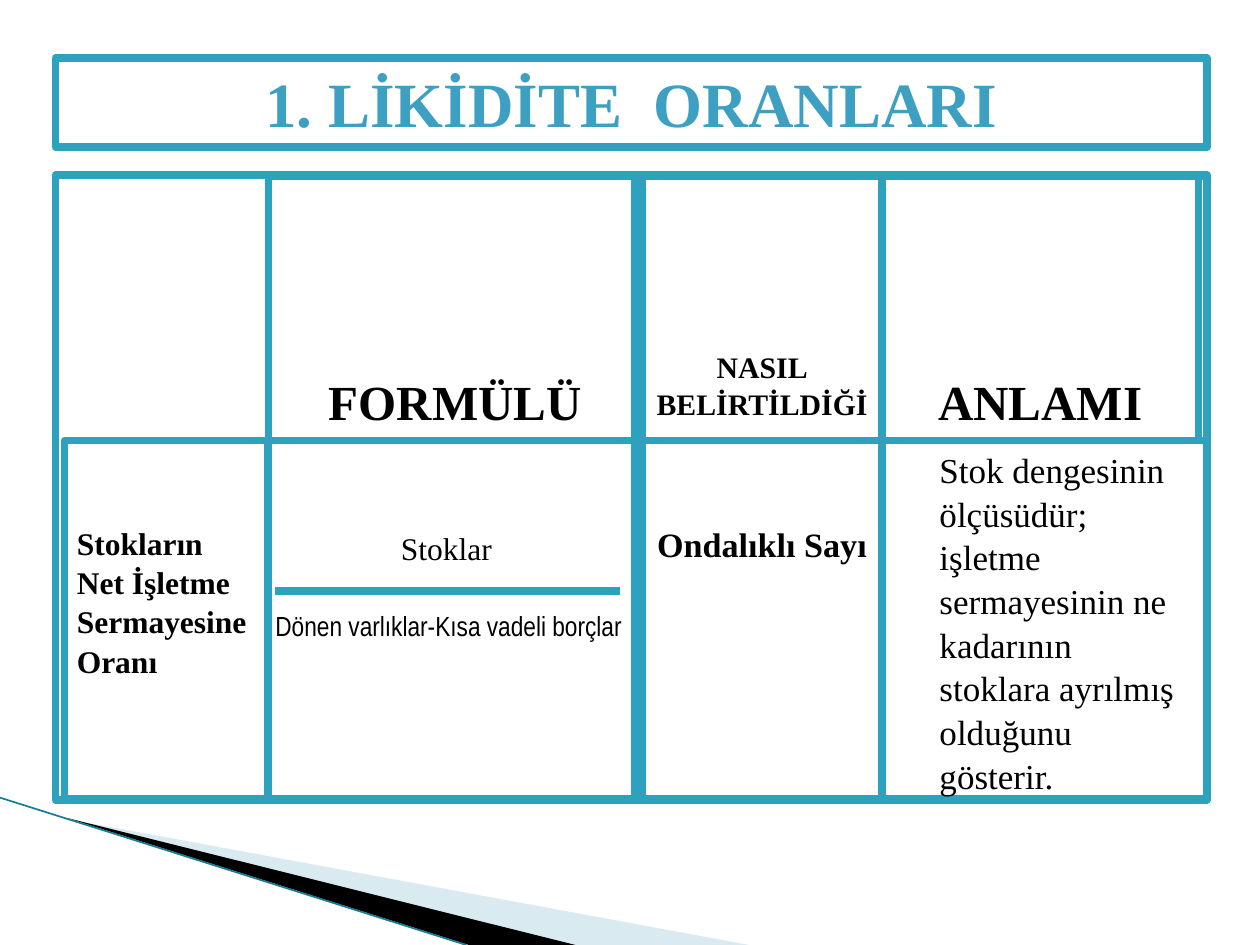
from lxml.etree import SubElement
from pptx import Presentation
from pptx.dml.color import RGBColor
from pptx.enum.shapes import MSO_CONNECTOR, MSO_SHAPE
from pptx.enum.text import MSO_ANCHOR, PP_ALIGN
from pptx.oxml.ns import qn
from pptx.util import Cm, Pt

HUES = {"line": "2DA2BF", "title": "3DA0C2", "text": "000000", "page": "FFFFFF",
        "pale": "A0CBDC", "edge": "167C95"}
SERIF, NARROW = "Times New Roman", "Arial Narrow"
LEFT, CENTER = PP_ALIGN.LEFT, PP_ALIGN.CENTER
TOP, MID, LOW = MSO_ANCHOR.TOP, MSO_ANCHOR.MIDDLE, MSO_ANCHOR.BOTTOM
TITLE = "1. LİKİDİTE  ORANLARI"

# Frames: left and right edge, in cm; both rows share the same heights
ROWS = {"head": (3.56, 8.88), "body": (8.88, 16.1), "all": (3.53, 16.13)}
FRAMES = [
    ("head", 5.41, 12.95), ("head", 5.41, 12.8), ("head", 12.95, 17.78),
    ("head", 17.78, 24.16), ("head", 17.78, 24.33),
    ("body", 1.3, 5.41), ("body", 5.41, 12.8), ("body", 12.95, 17.78),
    ("body", 17.78, 24.33), ("all", 1.12, 24.33),
]

# Texts: box (left, top, width, height), lines, size, font, bold, align,
# anchor, margins (side, top, bottom)
TEXTS = [
    ((5.41, 3.56, 7.54, 5.32), ["FORMÜLÜ"], 28, SERIF, True, CENTER, LOW, (0.25, 0, 0.2)),
    ((12.95, 3.56, 4.83, 5.32), ["NASIL", "BELİRTİLDİĞİ"], 17, SERIF, True, CENTER, LOW,
     (0.1, 0, 0.39)),
    ((17.78, 3.56, 6.38, 5.32), ["ANLAMI"], 28, SERIF, True, CENTER, LOW, (0.25, 0, 0.2)),
    ((1.3, 8.88, 4.11, 7.22), ["Stokların Net İşletme Sermayesine Oranı"], 18, SERIF, True,
     LEFT, TOP, (0.25, 1.65, 0)),
    ((12.95, 8.88, 4.83, 7.22), ["Ondalıklı Sayı"], 19.5, SERIF, True, CENTER, TOP,
     (0.1, 2.43, 0)),
    ((18.69, 8.88, 5.41, 7.22),
     ["Stok dengesinin ölçüsüdür;", "işletme",
      "sermayesinin ne kadarının stoklara ayrılmış olduğunu gösterir."],
     20, SERIF, False, LEFT, TOP, (0.25, 0.13, 0)),
    ((4.09, 12.12, 9.93, 0.94), ["Dönen varlıklar-Kısa vadeli borçlar"], 15.8, NARROW, False,
     CENTER, MID, (0.25, 0.13, 0.13)),
    ((7.82, 10.52, 2.36, 1.02), ["Stoklar"], 18, SERIF, False, CENTER, MID, (0, 0.13, 0.13)),
]

# Corner wedges: points, colour, opacity in percent
WEDGES = [
    ([(1.4, 16.52), (15.1, 19.05), (11.58, 19.05)], "pale", 40),
    ([(1.35, 16.49), (11.6, 19.05), (9.45, 19.05)], "text", 100),
]


def ink(hue):
    return RGBColor.from_string(HUES[hue])


def stroke(line, hue="line", width=4.33):
    line.color.rgb = ink(hue)
    line.width = Pt(width)


def rule(slide, x1, y1, x2, y2, *look):
    bar = slide.shapes.add_connector(MSO_CONNECTOR.STRAIGHT, Cm(x1), Cm(y1), Cm(x2), Cm(y2))
    stroke(bar.line, *look)
    SubElement(bar._element.spPr, qn("a:effectLst"))


def write(frame, lines, size, face, bold, align, anchor, gaps, hue="text", pitch=1.0):
    side, top, low = gaps
    frame.word_wrap = True
    frame.vertical_anchor = anchor
    frame.margin_left = frame.margin_right = Cm(side)
    frame.margin_top, frame.margin_bottom = Cm(top), Cm(low)
    frame.text = "\n".join(lines)
    for para in frame.paragraphs:
        para.alignment = align
        para.line_spacing = pitch
        for run in para.runs:
            font = run.font
            font.name, font.size, font.bold = face, Pt(size), bold
            font.color.rgb = ink(hue)


deck = Presentation()
deck.slide_width, deck.slide_height = Cm(25.4), Cm(19.05)
slide = deck.slides.add_slide(deck.slide_layouts[5])

# Corner decoration
for points, hue, alpha in WEDGES:
    spots = [(Cm(x), Cm(y)) for x, y in points]
    maker = slide.shapes.build_freeform(*spots[0])
    maker.add_line_segments(spots[1:])
    wedge = maker.convert_to_shape()
    wedge.shadow.inherit = False
    wedge.line.fill.background()
    wedge.fill.solid()
    wedge.fill.fore_color.rgb = ink(hue)
    tone = wedge._element.spPr.find(qn("a:solidFill"))[0]
    SubElement(tone, qn("a:alpha")).set("val", str(alpha * 1000))
rule(slide, 0, 16.08, 9.4, 19.05, "edge", 0.95)

# Title
title = slide.shapes.title
title.left, title.top, title.width, title.height = Cm(1.12), Cm(1.17), Cm(23.21), Cm(1.8)
title.fill.solid()
title.fill.fore_color.rgb = ink("page")
stroke(title.line)
write(title.text_frame, [TITLE], 36, SERIF, True, CENTER, MID, (0.25, 0.13, 0.13), "title")

# Frames
for row, left, right in FRAMES:
    top, low = ROWS[row]
    box = slide.shapes.add_shape(MSO_SHAPE.RECTANGLE, Cm(left), Cm(top),
                                 Cm(right - left), Cm(low - top))
    box.shadow.inherit = False
    box.fill.background()
    stroke(box.line)

# Texts and fraction bar
for place, lines, *style in TEXTS:
    note = slide.shapes.add_textbox(*map(Cm, place))
    write(note.text_frame, lines, *style, pitch=1.04)
rule(slide, 5.54, 11.91, 12.5, 11.91)

deck.save("out.pptx")
